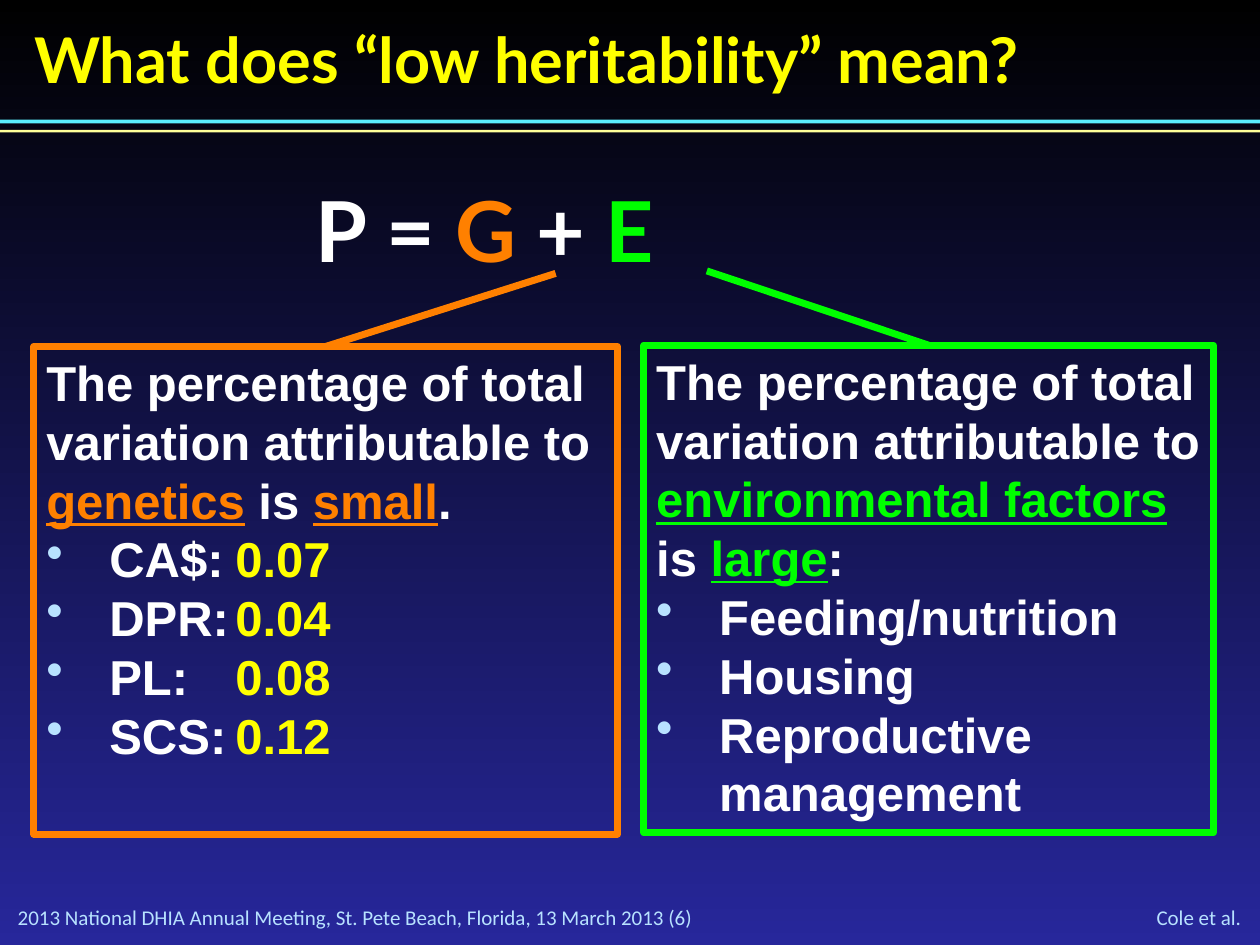
from lxml import etree
from pptx import Presentation
from pptx.dml.color import RGBColor
from pptx.enum.shapes import MSO_CONNECTOR, MSO_SHAPE
from pptx.enum.text import MSO_ANCHOR, PP_ALIGN
from pptx.oxml.ns import qn
from pptx.util import Inches, Pt

LEFT, RIGHT = PP_ALIGN.LEFT, PP_ALIGN.RIGHT
TOP, MIDDLE = MSO_ANCHOR.TOP, MSO_ANCHOR.MIDDLE
RECT, STRAIGHT = MSO_SHAPE.RECTANGLE, MSO_CONNECTOR.STRAIGHT
HEAD, BODY, FOOT = "Lato", "Arial", "Calibri"
COLORS = {
    "black": "000000", "navy": "27279B", "white": "FFFFFF", "yellow": "FFFF00",
    "cream": "FFFF99", "cyan": "5BEFFF", "pale": "B8E2FF",
    "orange": "FF8000", "green": "00FF00",
}


def color(name):
    return RGBColor.from_string(COLORS[name])


class Deck:
    def __init__(self):
        self.prs = Presentation()
        self.prs.slide_width, self.prs.slide_height = Inches(10), Inches(7.5)
        self.slide = None

    def page(self):
        self.slide = self.prs.slides.add_slide(self.prs.slide_layouts[5])
        fill = self.slide.background.fill
        fill.gradient()
        fill.gradient_angle = 270
        for stop, name in zip(fill.gradient_stops, ("black", "navy")):
            stop.color.rgb = color(name)

    def frame(self, shape, anchor, inset=(0.1, 0.05)):
        frame = shape.text_frame
        frame.word_wrap = True
        frame.vertical_anchor = anchor
        frame.margin_left = frame.margin_right = Inches(inset[0])
        frame.margin_top = frame.margin_bottom = Inches(inset[1])
        return frame

    def add_runs(self, para, runs, size, font, bold=True, align=LEFT):
        """Add runs given as (text, colour) or (text, colour, underline)."""
        para.alignment = align
        for text, name, *line in runs:
            run = para.add_run()
            run.text = text
            run.font.size, run.font.name, run.font.bold = Pt(size), font, bold
            run.font.color.rgb = color(name)
            if line:
                run.font.underline = line[0]

    def title(self, at, text):
        shape = self.slide.shapes.title
        shape.left, shape.top, shape.width, shape.height = map(Inches, at)
        frame = self.frame(shape, MIDDLE)
        self.add_runs(frame.paragraphs[0], [(text, "yellow")], 36, HEAD)

    def text(self, at, runs, size, font, bold=True, align=LEFT,
             anchor=TOP, inset=(0.1, 0.05)):
        shape = self.slide.shapes.add_textbox(*map(Inches, at))
        frame = self.frame(shape, anchor, inset)
        self.add_runs(frame.paragraphs[0], runs, size, font, bold, align)

    def footer(self, at, text, align):
        self.text(at, [(text, "pale")], 12, FOOT, False, align, MIDDLE, (0, 0))

    def rect(self, at):
        shape = self.slide.shapes.add_shape(RECT, *map(Inches, at))
        shape.shadow.inherit = False
        return shape

    def bar(self, at, name):
        shape = self.rect(at)
        shape.fill.solid()
        shape.fill.fore_color.rgb = color(name)
        shape.line.fill.background()

    def bullet(self, para):
        props = para._p.get_or_add_pPr()
        props.set("marL", str(Inches(0.5)))
        props.set("indent", str(Inches(-0.5)))
        tint = etree.SubElement(props, qn("a:buClr"))
        etree.SubElement(tint, qn("a:srgbClr")).set("val", COLORS["pale"])
        etree.SubElement(props, qn("a:buChar")).set("char", "•")

    def panel(self, at, name, intro, items):
        """Outlined box with an opening sentence and bullets below it."""
        shape = self.rect(at)
        shape.fill.background()
        shape.line.color.rgb = color(name)
        shape.line.width = Pt(4)
        frame = self.frame(shape, TOP)
        for i, runs in enumerate([intro, *items]):
            para = frame.add_paragraph() if i else frame.paragraphs[0]
            para.line_spacing = Pt(33.6)
            if i:
                self.bullet(para)
            self.add_runs(para, runs, 28, BODY)
        return shape

    def link(self, start, box, name):
        """Draw a line from a point to the top middle of a box."""
        x, y = map(Inches, start)
        line = self.slide.shapes.add_connector(STRAIGHT, x, y, x, y)
        line.end_connect(box, 0)
        line.line.color.rgb = color(name)
        line.line.width = Pt(4)
        etree.SubElement(line._element.spPr, qn("a:effectLst"))


def main():
    deck = Deck()
    deck.page()
    deck.bar((0, 0.95, 10, 0.03), "cyan")
    deck.bar((0, 1.03, 10, 0.02), "cream")
    deck.footer((0.14, 7.18, 5.78, 0.2),
                "2013 National DHIA Annual Meeting, St. Pete Beach, Florida, "
                "13 March 2013 (6)", LEFT)
    deck.footer((8.72, 7.17, 1.13, 0.21), "Cole et al.", RIGHT)
    deck.title((0.17, 0.11, 9.66, 0.7), "What does “low heritability” mean?")
    deck.text((2.41, 1.37, 7, 0.94),
              [("P = ", "white"), ("G", "orange"), (" + ", "white"),
               ("E", "green")], 48, HEAD)

    lead = ("The percentage of total variation attributable to ", "white")
    traits = [("CA$", "0.07"), ("DPR", "0.04"), ("PL", "0.08"), ("SCS", "0.12")]
    genes = deck.panel(
        (0.27, 2.75, 4.63, 3.87), "orange",
        [lead, ("genetics", "orange", True), (" is ", "white"),
         ("small", "orange", True), (".", "white")],
        [[(f"{trait}:\t", "white"), (value, "yellow")]
         for trait, value in traits])
    factors = ["Feeding/nutrition", "Housing", "Reproductive management"]
    envir = deck.panel(
        (5.11, 2.74, 4.52, 3.87), "green",
        [lead, ("environmental factors ", "green", True), ("is ", "white"),
         ("large", "green", True), (":", "white")],
        [[(factor, "white")] for factor in factors])

    deck.link((4.41, 2.17), genes, "orange")
    deck.link((5.61, 2.15), envir, "green")
    deck.prs.save("out.pptx")


if __name__ == "__main__":
    main()
